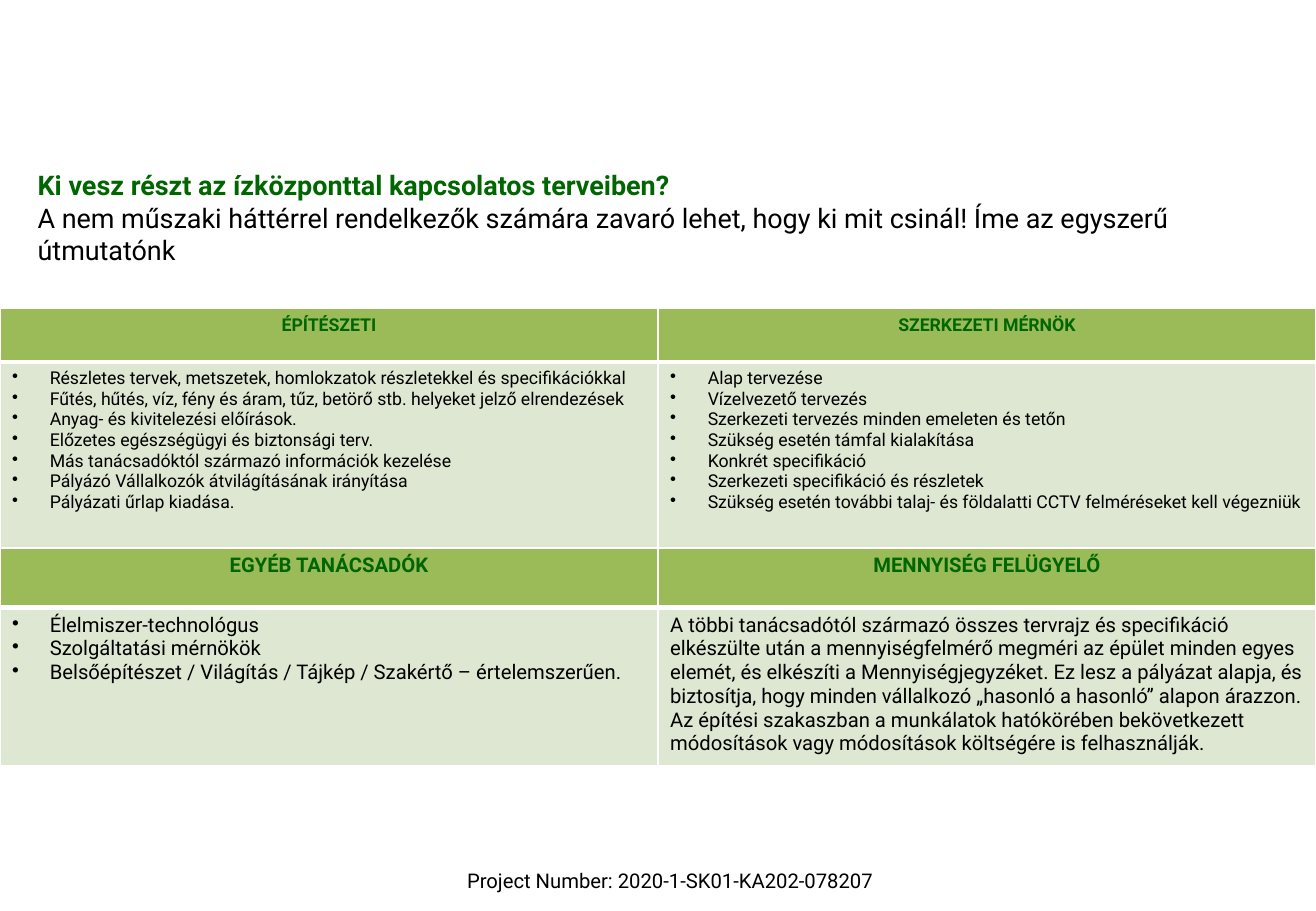
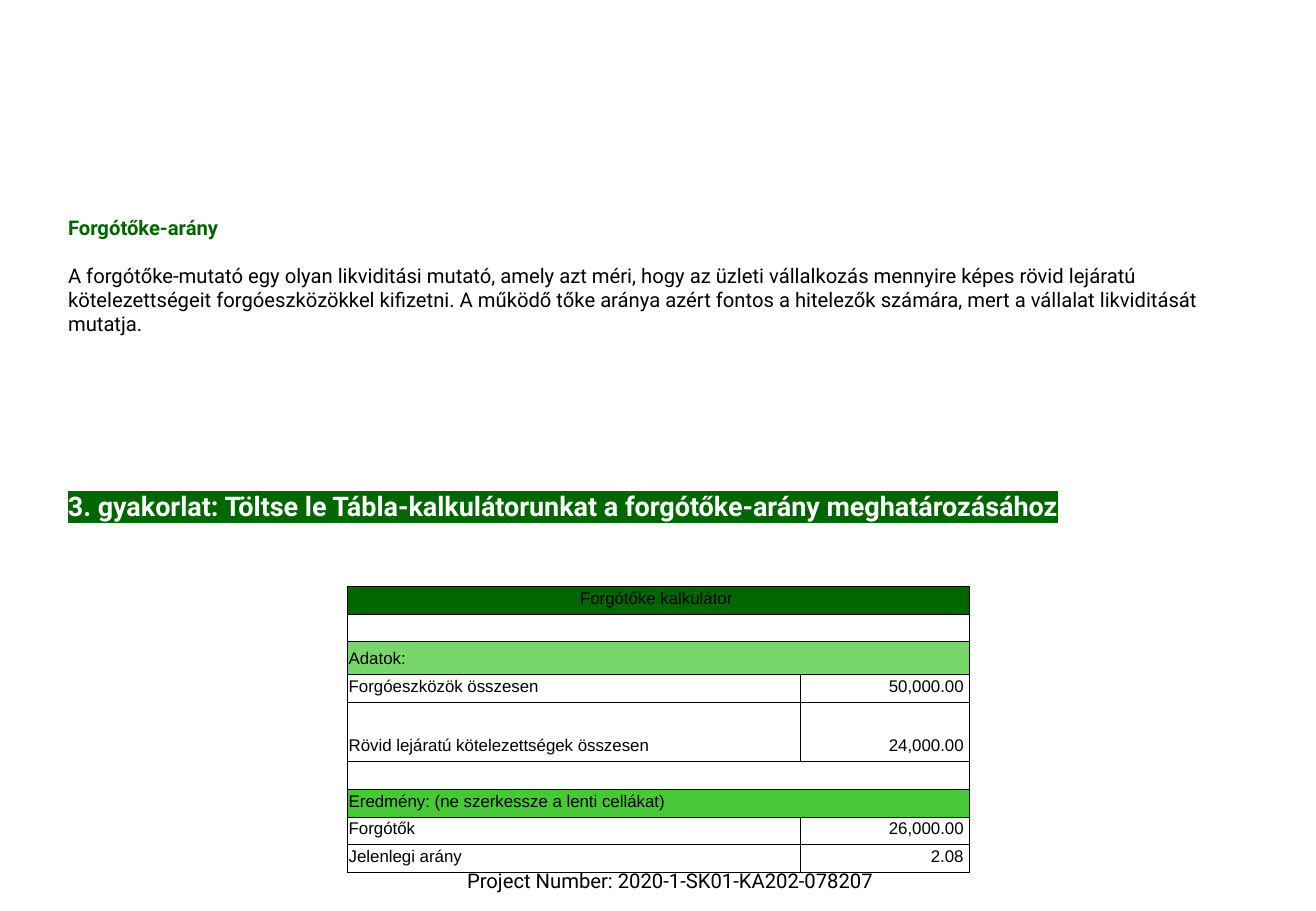
from lxml import etree
from pptx import Presentation
from pptx import util as u
from pptx.dml.color import RGBColor
from pptx.enum import text
from pptx.oxml import ns

WIDTH, HEIGHT = u.Inches(10.83), u.Inches(7.5)
GREEN, HEADER, PANEL = "006600", "9BBB59", "DEE7D1"
BLACK, WHITE = "000000", "FFFFFF"
LEFT, CENTER, RIGHT = text.PP_ALIGN.LEFT, text.PP_ALIGN.CENTER, text.PP_ALIGN.RIGHT


def write(frame, lines, size, color=BLACK, bold=False, font="Roboto", align=LEFT, bullet=False):
    """Fill a text frame with one paragraph per line."""
    frame.text = "\n".join(lines)
    for para in frame.paragraphs:
        para.alignment = align
        if bullet:
            props = para._p.get_or_add_pPr()
            props.set("marL", str(u.Inches(0.31)))
            props.set("indent", str(-u.Inches(0.31)))
            etree.SubElement(props, ns.qn("a:buChar")).set("char", "•")
        for span in para.runs:
            span.font.size, span.font.name, span.font.bold = u.Pt(size), font, bold
            span.font.color.rgb = RGBColor.from_string(color)
        if not para.runs:
            para._p.get_or_add_endParaRPr().set("sz", str(size * 100))


def dress(cell, fill, line, left, right, top, bottom):
    """Give a cell its border widths (points) and its fill."""
    props = cell._tc.get_or_add_tcPr()
    for side, points in zip("LRTB", (left, right, top, bottom)):
        edge = etree.SubElement(props, ns.qn("a:ln" + side), w=str(u.Pt(points)))
        solid = etree.SubElement(edge, ns.qn("a:solidFill"))
        etree.SubElement(solid, ns.qn("a:srgbClr"), val=line)
    if fill:
        cell.fill.solid()
        cell.fill.fore_color.rgb = RGBColor.from_string(fill)
    else:
        cell.fill.background()


deck = Presentation()
deck.slide_width, deck.slide_height = WIDTH, HEIGHT

# Shared parts: heading with introduction, footer
headings = [
    ((0.21, 1.34, 9.88, 0.91), 16, 0, "Ki vesz részt az ízközponttal kapcsolatos terveiben?",
     "A nem műszaki háttérrel rendelkezők számára zavaró lehet, hogy ki mit csinál! "
     "Íme az egyszerű útmutatónk"),
    ((0.46, 1.72, 9.92, 1.11), 12, 14, "Forgótőke-arány",
     "A forgótőke-mutató egy olyan likviditási mutató, amely azt méri, hogy az üzleti vállalkozás "
     "mennyire képes rövid lejáratú kötelezettségeit forgóeszközökkel kifizetni. A működő tőke aránya "
     "azért fontos a hitelezők számára, mert a vállalat likviditását mutatja."),
]
for place, size, gap, heading, intro in headings:
    page = deck.slides.add_slide(deck.slide_layouts[5])
    title = page.shapes.title
    title.left, title.top, title.width, title.height = map(u.Inches, place)
    frame = title.text_frame
    frame.word_wrap, frame.auto_size = True, text.MSO_AUTO_SIZE.NONE
    frame.vertical_anchor = text.MSO_ANCHOR.TOP
    write(frame, [heading, intro], size)
    span = frame.paragraphs[0].runs[0]
    span.font.bold, span.font.color.rgb = True, RGBColor.from_string(GREEN)
    frame.paragraphs[1].space_before = u.Pt(gap)

    footer = page.shapes.add_textbox(*map(u.Inches, (3.74, 7.1, 3.55, 0.3)))
    footer.text_frame.word_wrap = False
    write(footer.text_frame, ["Project Number: 2020-1-SK01-KA202-078207"], 12, align=CENTER)

team_page, ratio_page = deck.slides

# Slide 1: two tables of roles, each a header row above a body row
role_tables = [
    (2.54, (0.44, 2.33), 10.5, [
        ("ÉPÍTÉSZETI", [
            "Részletes tervek, metszetek, homlokzatok részletekkel és specifikációkkal",
            "Fűtés, hűtés, víz, fény és áram, tűz, betörő stb. helyeket jelző elrendezések",
            "Anyag- és kivitelezési előírások.",
            "Előzetes egészségügyi és biztonsági terv.",
            "Más tanácsadóktól származó információk kezelése",
            "Pályázó Vállalkozók átvilágításának irányítása",
            "Pályázati űrlap kiadása."]),
        ("SZERKEZETI MÉRNÖK", [
            "Alap tervezése",
            "Vízelvezető tervezés",
            "Szerkezeti tervezés minden emeleten és tetőn",
            "Szükség esetén támfal kialakítása",
            "Konkrét specifikáció",
            "Szerkezeti specifikáció és részletek",
            "Szükség esetén további talaj- és földalatti CCTV felméréseket kell végezniük"])]),
    (4.51, (0.49, 1.3), 12, [
        ("EGYÉB TANÁCSADÓK", [
            "Élelmiszer-technológus",
            "Szolgáltatási mérnökök",
            "Belsőépítészet / Világítás / Tájkép / Szakértő – értelemszerűen."]),
        ("MENNYISÉG FELÜGYELŐ", [
            "A többi tanácsadótól származó összes tervrajz és specifikáció elkészülte után a "
            "mennyiségfelmérő megméri az épület minden egyes elemét, és elkészíti a "
            "Mennyiségjegyzéket. Ez lesz a pályázat alapja, és biztosítja, hogy minden vállalkozó "
            "„hasonló a hasonló” alapon árazzon. Az építési szakaszban a munkálatok hatókörében "
            "bekövetkezett módosítások vagy módosítások költségére is felhasználják."])]),
]
for top, heights, size, roles in role_tables:
    table = team_page.shapes.add_table(
        2, 2, 0, u.Inches(top), WIDTH, u.Inches(sum(heights))).table
    table.first_row = table.horz_banding = False
    for row, height in zip(table.rows, heights):
        row.height = u.Inches(height)
    for column, (role, duties) in enumerate(roles):
        head, body = table.cell(0, column), table.cell(1, column)
        dress(head, HEADER, WHITE, 1, 1, 1, 3)
        dress(body, PANEL, WHITE, 1, 1, 3, 1)
        write(head.text_frame, [role], size, GREEN, True, align=CENTER)
        write(body.text_frame, duties, size, bullet=len(duties) > 1)

# Slide 2: highlighted exercise line
exercise = page.shapes.add_textbox(*map(u.Inches, (0.46, 3.98, 9.92, 0.37)))
exercise.text_frame.word_wrap = True
write(exercise.text_frame,
      ["3. gyakorlat: Töltse le Tábla-kalkulátorunkat a forgótőke-arány meghatározásához"],
      16, WHITE, True)
props = exercise.text_frame.paragraphs[0].runs[0]._r.rPr
highlight = etree.Element(ns.qn("a:highlight"))
etree.SubElement(highlight, ns.qn("a:srgbClr"), val=GREEN)
props.find(ns.qn("a:solidFill")).addnext(highlight)

# Slide 2: calculator; a row without a value spans both columns
LINE = 0.22
calculator = [
    (LINE, "Forgótőke kalkulátor", "", GREEN),
    (LINE, "", "", None),
    (0.27, "Adatok:", "", "78D76B"),
    (LINE, "Forgóeszközök összesen", "50,000.00", None),
    (0.49, "Rövid lejáratú kötelezettségek összesen", "24,000.00", None),
    (LINE, "", "", None),
    (LINE, "Eredmény: (ne szerkessze a lenti cellákat)", "", "47C836"),
    (LINE, "Forgótők", "26,000.00", None),
    (LINE, "Jelenlegi arány", "2.08", None),
]
table = ratio_page.shapes.add_table(
    len(calculator), 2, *map(u.Inches, (2.86, 4.83, 5.12, 2.33))).table
table.first_row = table.horz_banding = False
table.columns[0].width, table.columns[1].width = u.Inches(3.73), u.Inches(1.39)
for index, (height, label, value, fill) in enumerate(calculator):
    table.rows[index].height = u.Inches(height)
    first, second = table.cell(index, 0), table.cell(index, 1)
    for cell, words, align in ((first, label, LEFT if index else CENTER), (second, value, RIGHT)):
        cell.margin_left = cell.margin_top = u.Inches(0.01)
        cell.margin_right = cell.margin_bottom = u.Inches(0.05)
        cell.vertical_anchor = text.MSO_ANCHOR.BOTTOM
        dress(cell, fill, BLACK, 0.5, 0.5, 0.5, 0.5)
        write(cell.text_frame, [words], 10, font="Arial", align=align)
    if not value:
        first.merge(second)

deck.save("out.pptx")
